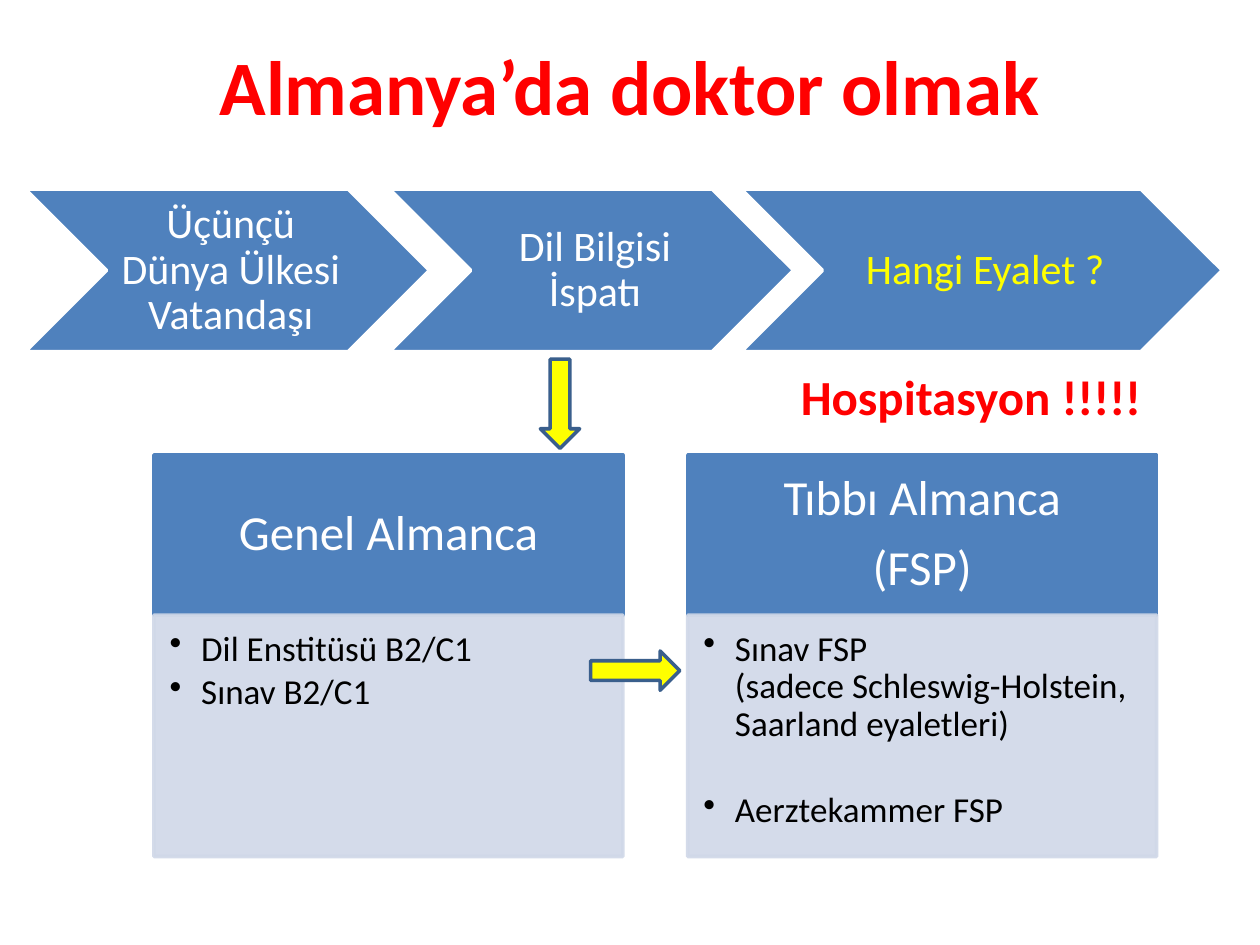
import pptx
import pptx.dml.color
import pptx.enum.shapes
import pptx.enum.text
import pptx.oxml.ns
import pptx.util
from lxml import etree

Pt = pptx.util.Pt
RGBColor = pptx.dml.color.RGBColor
MSO_SHAPE = pptx.enum.shapes.MSO_SHAPE
PP_ALIGN = pptx.enum.text.PP_ALIGN
MSO_ANCHOR = pptx.enum.text.MSO_ANCHOR
qn = pptx.oxml.ns.qn

BLUE = RGBColor(0x4F, 0x81, 0xBD)
PALE_BLUE = RGBColor(0xD0, 0xD8, 0xE8)
ARROW_EDGE = RGBColor(0x3A, 0x5F, 0x8C)
YELLOW = RGBColor(0xFF, 0xFF, 0x00)
RED = RGBColor(0xFF, 0x00, 0x00)
WHITE = RGBColor(0xFF, 0xFF, 0xFF)
BLACK = RGBColor(0x00, 0x00, 0x00)


class SlideBuilder:
    font_name = "Calibri"
    line_width = Pt(2)
    line_spacing = 0.9

    def __init__(self, slide):
        self.slide = slide

    def run(self, paragraph, text, size, color, bold=False):
        run = paragraph.add_run()
        run.text = text
        run.font.name = self.font_name
        run.font.size = Pt(size)
        run.font.bold = bold
        run.font.color.rgb = color

    def shape(self, kind, box, fill, edge):
        shape = self.slide.shapes.add_shape(kind, *map(Pt, box))
        shape.shadow.inherit = False
        shape.fill.solid()
        shape.fill.fore_color.rgb = fill
        shape.line.color.rgb = edge
        shape.line.width = self.line_width
        return shape

    def frame(self, shape, margins, anchor):
        frame = shape.text_frame
        frame.word_wrap = True
        frame.vertical_anchor = anchor
        (frame.margin_left, frame.margin_top,
         frame.margin_right, frame.margin_bottom) = map(Pt, margins)
        return frame

    def paragraph(self, frame, index, align, space_after):
        paragraph = frame.add_paragraph() if index else frame.paragraphs[0]
        paragraph.alignment = align
        paragraph.line_spacing = self.line_spacing
        paragraph.space_after = Pt(space_after)
        return paragraph

    def title(self, text, box):
        title = self.slide.shapes.title
        title.left, title.top, title.width, title.height = map(Pt, box)
        title.text_frame.vertical_anchor = MSO_ANCHOR.MIDDLE
        paragraph = title.text_frame.paragraphs[0]
        paragraph.alignment = PP_ALIGN.CENTER
        self.run(paragraph, text, 44, RED, bold=True)

    def label(self, kind, box, lines, size, color, edge, margins):
        shape = self.shape(kind, box, BLUE, edge)
        frame = self.frame(shape, margins, MSO_ANCHOR.MIDDLE)
        for index, line in enumerate(lines):
            paragraph = self.paragraph(frame, index, PP_ALIGN.CENTER, 0.35 * size)
            self.run(paragraph, line, size, color)

    def step(self, box, text, color):
        self.label(MSO_SHAPE.CHEVRON, box, [text], 24, color, WHITE, (7, 3, 3, 3))

    def heading(self, box, lines):
        self.label(MSO_SHAPE.RECTANGLE, box, lines, 28, WHITE, BLUE, (16, 9, 16, 9))

    def bullets(self, box, items):
        """Each item is (space before, lines)."""
        shape = self.shape(MSO_SHAPE.RECTANGLE, box, PALE_BLUE, PALE_BLUE)
        for color in shape.element.spPr.iter(qn("a:srgbClr")):
            etree.SubElement(color, qn("a:alpha"), val="90000")
        frame = self.frame(shape, (9, 9, 12, 12), MSO_ANCHOR.TOP)
        for index, (space_before, lines) in enumerate(items):
            paragraph = self.paragraph(frame, index, PP_ALIGN.LEFT, 3)
            if space_before:
                paragraph.space_before = Pt(space_before)
            properties = paragraph._p.get_or_add_pPr()
            properties.set("marL", str(Pt(18)))
            properties.set("indent", str(-Pt(18)))
            etree.SubElement(properties, qn("a:buChar"), char="•")
            for number, line in enumerate(lines):
                if number:
                    paragraph.add_line_break()
                self.run(paragraph, line, 20, BLACK)

    def arrow(self, left, top, rotation=0):
        arrow = self.shape(MSO_SHAPE.RIGHT_ARROW, (left, top, 51, 22.5), YELLOW, ARROW_EDGE)
        arrow.rotation = rotation

    def note(self, box, text):
        note = self.slide.shapes.add_textbox(*map(Pt, box))
        note.text_frame.word_wrap = False
        self.run(note.text_frame.paragraphs[0], text, 28, RED, bold=True)


def main():
    presentation = pptx.Presentation()
    presentation.slide_width, presentation.slide_height = Pt(720), Pt(540)
    builder = SlideBuilder(presentation.slides.add_slide(presentation.slide_layouts[5]))

    builder.title("Almanya’da doktor olmak", (36, 3.6, 648, 90))

    # Steps across the top
    for left, width, text, color in [
        (14.4, 231, "Üçünçü Dünya Ülkesi Vatandaşı", WHITE),
        (222.5, 231, "Dil Bilgisi İspatı", WHITE),
        (423.5, 275, "Hangi Eyalet ?", YELLOW),
    ]:
        builder.step((left, 108, width, 93), text, color)

    # Language requirements
    width, top, heading_height, list_height = 268, 260, 91.5, 138
    requirements = [
        (["Genel Almanca"],
         [(0, ["Dil Enstitüsü B2/C1"]), (0, ["Sınav B2/C1"])]),
        (["Tıbbı Almanca", "(FSP)"],
         [(0, ["Sınav FSP", "(sadece Schleswig-Holstein, Saarland eyaletleri)"]),
          (24.5, ["Aerztekammer FSP"])]),
    ]
    for column, (heading, items) in enumerate(requirements):
        left = 88 + column * 305
        builder.heading((left, top, width, heading_height), heading)
        builder.bullets((left, top + heading_height, width, list_height), items)

    # Path from the language proof to the exams
    builder.arrow(294.5, 219.5, rotation=90)
    builder.arrow(337.5, 372)

    builder.note((450.5, 206, 217.5, 41), "Hospitasyon !!!!!")

    presentation.save("out.pptx")


if __name__ == "__main__":
    main()
